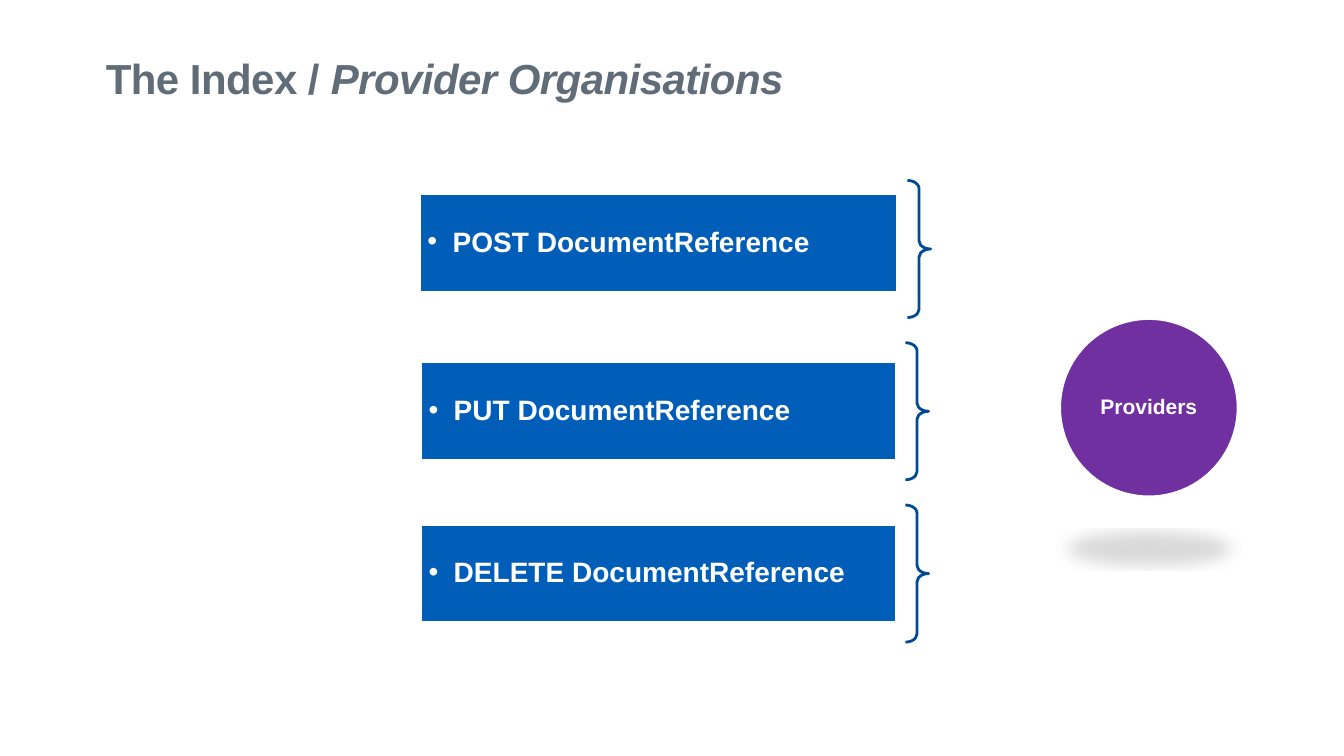
from lxml import etree
from pptx import Presentation
from pptx import util as u
from pptx.dml.color import RGBColor
from pptx.enum import shapes, text
from pptx.oxml import ns

SLATE = RGBColor(0x60, 0x6D, 0x78)
BLUE = RGBColor(0x00, 0x5E, 0xB8)
NAVY = RGBColor(0x00, 0x4B, 0x93)
PURPLE = RGBColor(0x70, 0x30, 0xA0)
WHITE = RGBColor(0xFF, 0xFF, 0xFF)

# operation, bar left, bar top, bar width, brace left
OPERATIONS = [
    ("POST DocumentReference", 4.16, 1.92, 4.74, 9.0),
    ("PUT DocumentReference", 4.17, 3.59, 4.72, 8.98),
    ("DELETE DocumentReference", 4.17, 5.2, 4.72, 8.98),
]
BRACE_TOP, BRACE_PITCH = 1.79, 1.61


def add_child(parent, tag, **attributes):
    child = etree.SubElement(parent, ns.qn(tag))
    for name, value in attributes.items():
        child.set(name, str(value))
    return child


def write(frame, *runs, size, color, inset=0, anchor=text.MSO_ANCHOR.TOP,
          align=text.PP_ALIGN.LEFT, line_spacing=None, space_after=0,
          tracking=None, bullet=False):
    """Fill a text frame with one bold paragraph of (words, italic) runs."""
    frame.word_wrap = True
    frame.vertical_anchor = anchor
    frame.margin_left = frame.margin_right = u.Inches(inset)
    frame.margin_top = frame.margin_bottom = u.Inches(inset)
    paragraph = frame.paragraphs[0]
    paragraph.alignment = align
    paragraph.line_spacing = line_spacing
    paragraph.space_after = u.Pt(space_after)
    if bullet:
        properties = paragraph._p.get_or_add_pPr()
        properties.set("marL", str(u.Inches(0.25)))
        properties.set("indent", str(u.Inches(-0.25)))
        add_child(properties, "a:buFont", typeface="Arial")
        add_child(properties, "a:buChar", char="•")
    for words, italic in runs:
        run = paragraph.add_run()
        run.text = words
        font = run.font
        font.name, font.size, font.bold = "Arial", u.Pt(size), True
        font.italic = italic
        font.color.rgb = color
        if tracking is not None:
            run._r.get_or_add_rPr().set("spc", str(round(tracking * 100)))


class ProviderSlide:
    LINE_WIDTH = u.Pt(2)

    def __init__(self, deck):
        self.slide = deck.slides.add_slide(deck.slide_layouts[6])

    def shape(self, kind, left, top, width, height, line, fill=None):
        shape = self.slide.shapes.add_shape(
            kind, *map(u.Inches, (left, top, width, height)))
        shape.shadow.inherit = False
        shape.line.color.rgb = line
        shape.line.width = self.LINE_WIDTH
        if fill is None:
            shape.fill.background()
        else:
            shape.fill.solid()
            shape.fill.fore_color.rgb = fill
        return shape

    def title(self, *runs):
        heading = self.slide.shapes.add_textbox(
            *map(u.Inches, (1.05, 0.52, 11.13, 0.77)))
        write(heading.text_frame, *runs, size=30, color=SLATE, tracking=-0.4)

    def circle(self, label, left, top, diameter):
        """Add a labelled circle that casts a flat shadow below itself."""
        circle = self.shape(shapes.MSO_SHAPE.OVAL, left, top, diameter, diameter,
                            WHITE, PURPLE)
        effects = circle._element.spPr.find(ns.qn("a:effectLst"))
        shadow = add_child(effects, "a:outerShdw", blurRad=u.Pt(12), dist=u.Pt(25),
                           dir=5400000, sx=90000, sy=-19000, rotWithShape=0)
        black = add_child(shadow, "a:srgbClr", val="000000")
        add_child(black, "a:alpha", val=15000)
        write(circle.text_frame, (label, False), size=15, color=WHITE, inset=0.01,
              anchor=text.MSO_ANCHOR.MIDDLE, align=text.PP_ALIGN.CENTER,
              line_spacing=0.9, space_after=5.25)

    def brace(self, left, top):
        brace = self.shape(shapes.MSO_SHAPE.LEFT_BRACE, left, top, 0.23, 1.36, NAVY)
        brace.rotation = 180
        brace.adjustments[0] = 0.35
        brace.adjustments[1] = 0.5

    def bar(self, label, left, top, width):
        bar = self.shape(shapes.MSO_SHAPE.RECTANGLE, left, top, width, 0.98,
                         WHITE, BLUE)
        write(bar.text_frame, (label, False), size=20, color=WHITE, inset=0.08,
              anchor=text.MSO_ANCHOR.MIDDLE, line_spacing=0.9, space_after=3,
              bullet=True)


def main():
    deck = Presentation()
    deck.slide_width, deck.slide_height = u.Inches(13.33), u.Inches(7.5)
    page = ProviderSlide(deck)
    page.title(("The Index / ", False), ("Provider Organisations", True))
    page.circle("Providers", 10.51, 3.16, 1.77)
    for row, (operation, left, top, width, brace_left) in enumerate(OPERATIONS):
        page.brace(brace_left, BRACE_TOP + row * BRACE_PITCH)
        page.bar(operation, left, top, width)
    deck.save("out.pptx")


if __name__ == "__main__":
    main()
